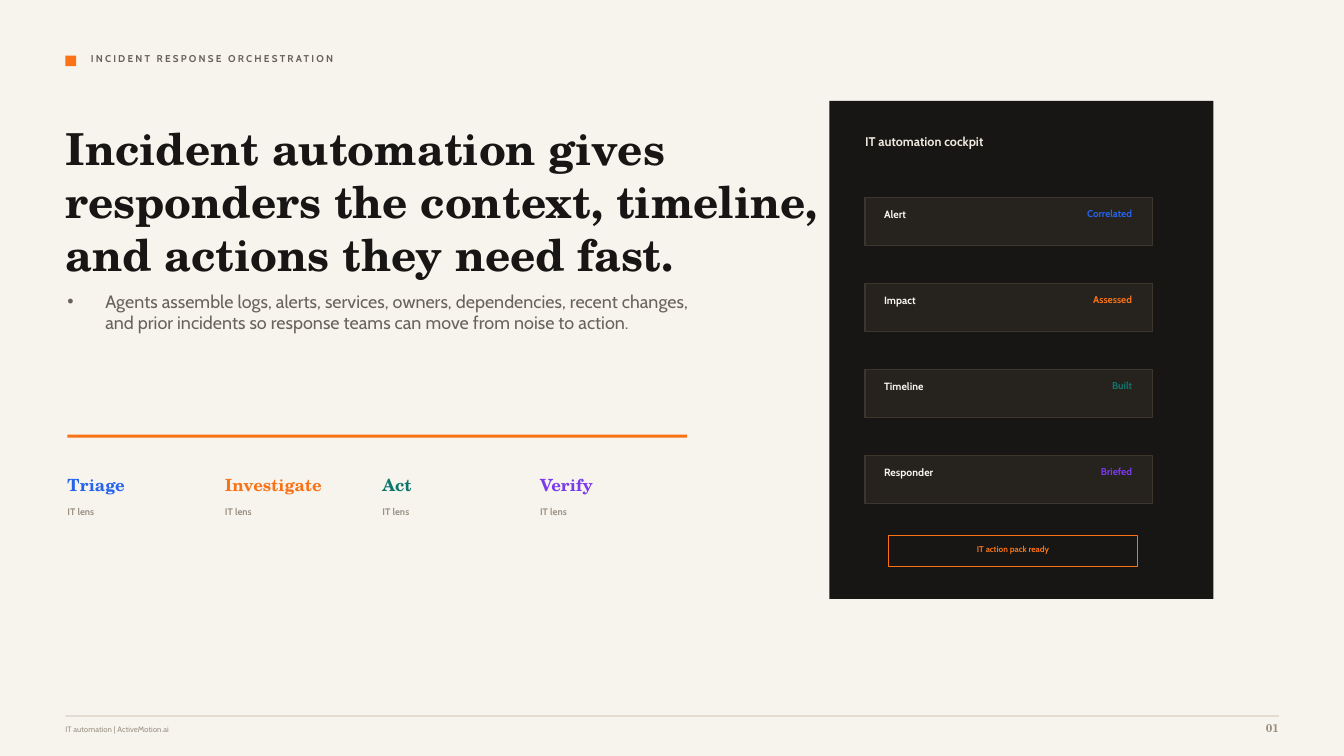
from dataclasses import dataclass

from lxml.etree import SubElement
from pptx import Presentation
from pptx.dml.color import RGBColor
from pptx.enum.shapes import MSO_SHAPE
from pptx.enum.text import MSO_ANCHOR, MSO_AUTO_SIZE, PP_ALIGN
from pptx.oxml.ns import qn
from pptx.util import Cm, Pt


@dataclass(frozen=True)
class Theme:
    paper: str = "F7F4EE"
    ink: str = "171614"
    text: str = "69635A"
    muted: str = "9A9184"
    rule: str = "D9D0C3"
    pale: str = "EDE7DD"
    card: str = "26231F"
    edge: str = "3C362E"
    blue: str = "2563EB"
    orange: str = "F97316"
    teal: str = "0F766E"
    violet: str = "7C3AED"
    sans: str = "Cabin"
    serif: str = "TeX Gyre Schola"
    title: float = 31.5
    lead: float = 12.8
    lens: float = 12
    panel: float = 9
    page: float = 8.2
    name: float = 7.5
    small: float = 7.1
    label: float = 6.8
    button: float = 6
    foot: float = 5.6


T = Theme()
ACCENTS = (T.blue, T.orange, T.teal, T.violet)


def place(shape, x, y, w, h):
    shape.left, shape.top, shape.width, shape.height = Cm(x), Cm(y), Cm(w), Cm(h)


def write(shape, text, size, color, face=T.sans, bold=True, align=PP_ALIGN.LEFT):
    """Fill a text shape with one paragraph, top anchored, without insets."""
    frame = shape.text_frame
    frame.word_wrap = True
    frame.auto_size = MSO_AUTO_SIZE.NONE
    frame.vertical_anchor = MSO_ANCHOR.TOP
    frame.margin_left = frame.margin_right = 0
    frame.margin_top = frame.margin_bottom = 0
    frame.text = text
    para = frame.paragraphs[0]
    para.alignment = align
    para.space_before = Pt(0)
    font = para.font
    font.name, font.size, font.bold = face, Pt(size), bold
    font.color.rgb = RGBColor.from_string(color)
    return para


def label(slide, box, text, size, color, **style):
    shape = slide.shapes.add_textbox(*map(Cm, box))
    return write(shape, text, size, color, **style)


def block(slide, box, fill=None, line=None):
    shape = slide.shapes.add_shape(MSO_SHAPE.RECTANGLE, *map(Cm, box))
    shape.shadow.inherit = False
    if fill:
        shape.fill.solid()
        shape.fill.fore_color.rgb = RGBColor.from_string(fill)
    else:
        shape.fill.background()
    if line:
        shape.line.color.rgb = RGBColor.from_string(line)
        shape.line.width = Pt(0.75)
    else:
        shape.line.fill.background()


def header(slide, x, y, w):
    block(slide, (x, y + 0.08, 0.27, 0.27), T.orange)
    para = label(slide, (x + 0.64, y, w - 0.64, 0.48),
                 "INCIDENT RESPONSE ORCHESTRATION", T.small, T.text)
    para.runs[0].font._element.set("spc", "160")


def intro(slide, x, y, w):
    """Place the headline and the lead text below it."""
    title, lead = slide.shapes.title, slide.placeholders[1]
    place(title, x, y, w, 3.33)
    write(title, "Incident automation gives responders the context, timeline, "
          "and actions they need fast.", T.title, T.ink, face=T.serif)
    place(lead, x + 0.05, y + 4.25, w - 3.17, 2.34)
    props = lead.text_frame.paragraphs[0]._p.get_or_add_pPr()
    props.set("marL", "0")
    props.set("indent", "0")
    SubElement(props, qn("a:buNone"))
    write(lead, "Agents assemble logs, alerts, services, owners, dependencies, "
          "recent changes, and prior incidents so response teams can move from "
          "noise to action.", T.lead, T.text, bold=False)


def lenses(slide, x, y, w):
    """Draw the orange rule and the four evenly spaced lenses."""
    block(slide, (x, y, w, 0.08), T.orange)
    words = ("Triage", "Investigate", "Act", "Verify")
    for i, (word, color) in enumerate(zip(words, ACCENTS)):
        left = x + i * 3.97
        label(slide, (left, y + 1.01, 3.18, 0.53), word, T.lens, color,
              face=T.serif)
        label(slide, (left, y + 1.8, 2.92, 0.43), "IT lens", T.label, T.muted)


def row(slide, x, y, w, name, state, color):
    block(slide, (x, y, w, 1.22), T.card, T.edge)
    label(slide, (x + 0.48, y + 0.26, 3.43, 0.43), name, T.name, T.paper)
    label(slide, (x + w - 3.05, y + 0.26, 2.54, 0.43), state, T.small, color,
          align=PP_ALIGN.RIGHT)


def cockpit(slide, x, y, w, h):
    block(slide, (x, y, w, h), T.ink)
    left = x + 0.9
    label(slide, (left, y + 0.84, 5.82, 0.64), "IT automation cockpit",
          T.panel, T.pale)
    steps = (("Alert", "Correlated"), ("Impact", "Assessed"),
             ("Timeline", "Built"), ("Responder", "Briefed"))
    for i, (step, color) in enumerate(zip(steps, ACCENTS)):
        row(slide, left, y + 2.43 + i * 2.17, w - 2.44, *step, color)
    base = y + h - 1.6
    block(slide, (x + 1.48, base, 6.3, 0.79), line=T.orange)
    label(slide, (x + 1.8, base + 0.23, 5.66, 0.36), "IT action pack ready",
          T.button, T.orange, align=PP_ALIGN.CENTER)


def footer(slide, x, y, w):
    block(slide, (x, y, w, 0.03), T.rule)
    label(slide, (x, y + 0.23, 20.12, 0.38), "IT automation | ActiveMotion.ai",
          T.foot, T.muted, bold=False)
    label(slide, (x + w - 1.27, y + 0.13, 1.27, 0.48), "01", T.page, T.muted,
          face=T.serif, align=PP_ALIGN.RIGHT)


def main():
    deck = Presentation()
    deck.slide_width, deck.slide_height = Cm(33.87), Cm(19.05)
    slide = deck.slides.add_slide(deck.slide_layouts[1])
    slide.background.fill.solid()
    slide.background.fill.fore_color.rgb = RGBColor.from_string(T.paper)
    header(slide, 1.65, 1.32, 17.04)
    intro(slide, 1.65, 3.07, 19.58)
    lenses(slide, 1.7, 10.95, 15.62)
    cockpit(slide, 20.9, 2.54, 9.68, 12.55)
    footer(slide, 1.65, 18.03, 30.58)
    deck.save("out.pptx")


if __name__ == "__main__":
    main()
